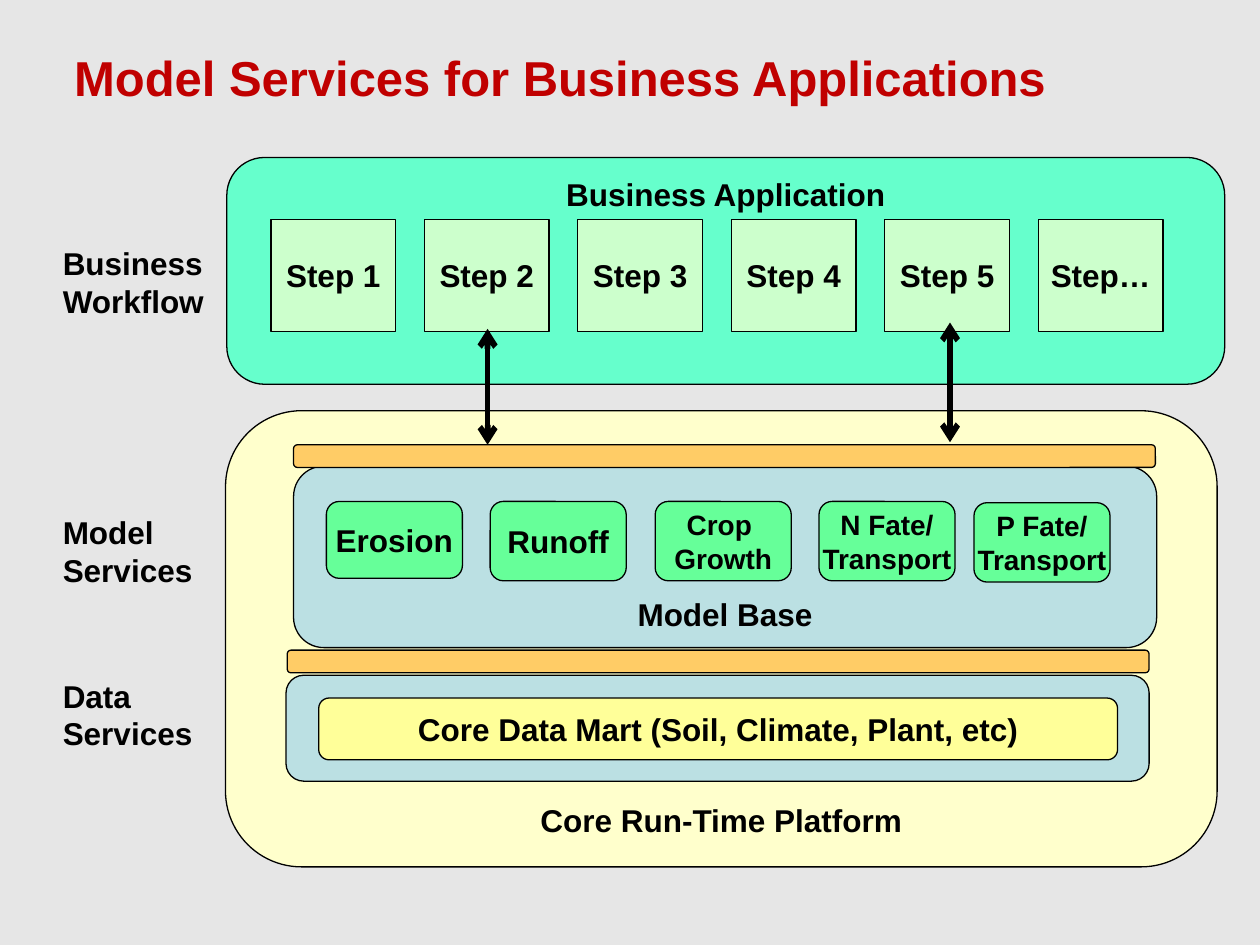
from lxml import etree
from pptx import Presentation
from pptx import util as u
from pptx.dml.color import RGBColor
from pptx.enum import shapes, text
from pptx.oxml import ns

FONT = "Arial"
COLORS = {
    "background": "E6E6E6",
    "title": "C00000",
    "ink": "000000",
    "platform": "FFFFCC",
    "application": "66FFCC",
    "step": "CCFFCC",
    "layer": "BBE0E3",
    "model": "66FF99",
    "data": "FFFF99",
    "interface": "FFCC66",
}
RECT = shapes.MSO_SHAPE.RECTANGLE
ROUNDED = shapes.MSO_SHAPE.ROUNDED_RECTANGLE
TOP, MIDDLE, BOTTOM = (text.MSO_ANCHOR.TOP, text.MSO_ANCHOR.MIDDLE,
                       text.MSO_ANCHOR.BOTTOM)

STEPS = ["Step 1", "Step 2", "Step 3", "Step 4", "Step 5", "Step…"]
STEP_LEFT, STEP_PITCH = 2.15, 6.09 / 5
MODELS = [  # lines, left, top, height, text size
    (["Erosion"], 2.59, 3.98, 0.61, 18),
    (["Runoff"], 3.89, 3.98, 0.63, 18),
    (["Crop ", "Growth"], 5.2, 3.98, 0.63, 16),
    (["N Fate/", "Transport"], 6.5, 3.98, 0.63, 16),
    (["P Fate/", "Transport"], 7.73, 3.99, 0.63, 16),
]
LABELS = [  # lines, top, width
    (["Business", "Workflow"], 1.89, 1.33),
    (["Model", "Services"], 4.02, 1.24),
    (["Data", "Services"], 5.32, 1.24),
]
ARROWS = [(3.87, 2.61, 3.53), (7.54, 2.56, 3.51)]  # x, top, bottom


def rgb(name):
    return RGBColor.from_string(COLORS[name])


def inches(values):
    return [u.Inches(value) for value in values]


def write(shape, lines, size=18, color="ink", align=text.PP_ALIGN.LEFT,
          **frame_format):
    """Put one bold paragraph per line into the shape."""
    frame = shape.text_frame
    for name, value in {"word_wrap": False, **frame_format}.items():
        setattr(frame, name, value)
    font_format = {"name": FONT, "size": u.Pt(size), "bold": True}
    for index, line in enumerate(lines):
        para = frame.add_paragraph() if index else frame.paragraphs[0]
        para.alignment = align
        span = para.add_run()
        span.text = line
        span.font.color.rgb = rgb(color)
        for name, value in font_format.items():
            setattr(span.font, name, value)


def add_box(page, place, fill, lines=(), size=18, anchor=MIDDLE, kind=ROUNDED):
    box = page.shapes.add_shape(kind, *inches(place))
    box.shadow.inherit = False
    box.fill.solid()
    box.fill.fore_color.rgb = rgb(fill)
    box.line.color.rgb = rgb("ink")
    box.line.width = u.Pt(0.75)
    write(box, lines, size, align=text.PP_ALIGN.CENTER, vertical_anchor=anchor)


def add_label(page, place, lines, **text_format):
    label = page.shapes.add_textbox(*inches(place))
    write(label, lines, auto_size=text.MSO_AUTO_SIZE.SHAPE_TO_FIT_TEXT,
          **text_format)


def add_double_arrow(page, x, top, bottom):
    arrow = page.shapes.add_connector(
        shapes.MSO_CONNECTOR.STRAIGHT, *inches((x, top, x, bottom)))
    arrow.line.color.rgb = rgb("ink")
    arrow.line.width = u.Pt(3.25)
    outline = arrow.line._get_or_add_ln()
    for end in ("a:headEnd", "a:tailEnd"):
        etree.SubElement(outline, ns.qn(end), type="arrow")
    etree.SubElement(arrow._element.spPr, ns.qn("a:effectLst"))


def main():
    deck = Presentation()
    deck.slide_width, deck.slide_height = inches((10, 7.5))
    page = deck.slides.add_slide(deck.slide_layouts[6])
    page.background.fill.solid()
    page.background.fill.fore_color.rgb = rgb("background")

    add_box(page, (1.79, 3.26, 7.87, 3.62), "platform",
            ["Core Run-Time Platform"], anchor=BOTTOM)
    add_box(page, (1.8, 1.25, 7.92, 1.8), "application",
            ["Business Application"], anchor=TOP)
    add_label(page, (0.49, 0.33, 7.98, 0.57),
              ["Model Services for Business Applications"],
              size=28, color="title", word_wrap=True)

    for index, step in enumerate(STEPS):
        left = STEP_LEFT + index * STEP_PITCH
        add_box(page, (left, 1.74, 0.99, 0.89), "step", [step], kind=RECT)

    add_box(page, (2.33, 3.7, 6.85, 1.44), "layer", ["Model Base"],
            anchor=BOTTOM)
    for lines, left, top, height, size in MODELS:
        add_box(page, (left, top, 1.08, height), "model", lines, size)

    add_box(page, (2.27, 5.36, 6.85, 0.84), "layer")
    add_box(page, (2.53, 5.54, 6.34, 0.49), "data",
            ["Core Data Mart (Soil, Climate, Plant, etc)"])

    for lines, top, width in LABELS:
        add_label(page, (0.4, top, width, 0.71), lines)
    for left, top in ((2.28, 5.16), (2.33, 3.53)):
        add_box(page, (left, top, 6.84, 0.18), "interface")
    for x, top, bottom in ARROWS:
        add_double_arrow(page, x, top, bottom)

    deck.save("out.pptx")


if __name__ == "__main__":
    main()
